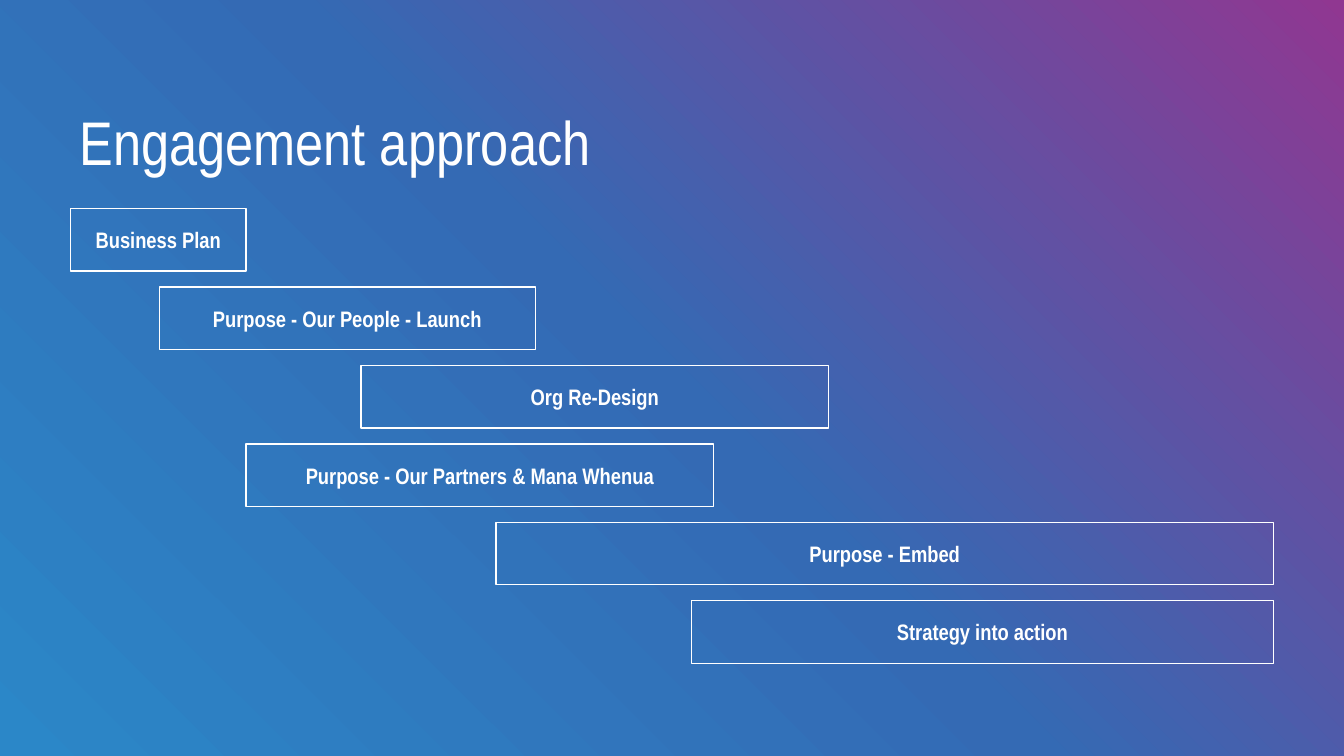
from copy import deepcopy

from pptx import Presentation
from pptx.dml.color import RGBColor
from pptx.enum.shapes import MSO_SHAPE
from pptx.enum.text import MSO_ANCHOR, PP_ALIGN
from pptx.util import Inches, Pt

RECT = MSO_SHAPE.RECTANGLE
MIDDLE = MSO_ANCHOR.MIDDLE
CENTER = PP_ALIGN.CENTER

# Content: phase name, start and end in inches across the slide
TITLE = "Engagement approach"
PHASES = [
    ("Business Plan", 0.70, 2.44),
    ("Purpose - Our People - Launch", 1.58, 5.31),
    ("Org Re-Design", 3.58, 8.22),
    ("Purpose - Our Partners & Mana Whenua", 2.44, 7.08),
    ("Purpose - Embed", 4.92, 12.63),
    ("Strategy into action", 6.86, 12.63),
]

# Style
FONT = "Arial Narrow"
WHITE = RGBColor(0xFF, 0xFF, 0xFF)
SKY = RGBColor(0x2B, 0x87, 0xC8)
BLUE = RGBColor(0x34, 0x6A, 0xB4)
PURPLE = RGBColor(0x90, 0x37, 0x91)
GRADIENT = [(0, SKY), (0.5, BLUE), (1, PURPLE)]

# Evenly spaced rows of the phase chart, in inches
FIRST_ROW, LAST_ROW, BAR_HEIGHT = 2.07, 5.96, 0.62
ROW_PITCH = (LAST_ROW - FIRST_ROW) / (len(PHASES) - 1)


def paint_background(s):
    fill = s.background.fill
    fill.gradient()
    fill.gradient_angle = 45
    # The default gradient has two stops; add the middle one
    stop_list = s._element.xpath(".//a:gsLst")[0]
    stop_list.insert(1, deepcopy(stop_list[0]))
    for stop, (position, color) in zip(fill.gradient_stops, GRADIENT):
        stop.position = position
        stop.color.rgb = color


def write(tf, text, size, bold=False):
    p = tf.paragraphs[0]
    p.text = text
    p.font.name = FONT
    p.font.size = Pt(size)
    p.font.bold = bold
    p.font.color.rgb = WHITE
    return p


def add_phase(s, row, name, start, end):
    top = FIRST_ROW + row * ROW_PITCH
    sp = s.shapes.add_shape(RECT, Inches(start), Inches(top),
                            Inches(end - start), Inches(BAR_HEIGHT))
    sp.shadow.inherit = False
    sp.fill.background()
    sp.line.color.rgb = WHITE
    sp.line.width = Pt(1)
    sp.text_frame.vertical_anchor = MIDDLE
    write(sp.text_frame, name, 16, bold=True).alignment = CENTER


def main():
    prs = Presentation()
    prs.slide_width, prs.slide_height = Inches(13.33), Inches(7.5)
    s = prs.slides.add_slide(prs.slide_layouts[6])
    paint_background(s)

    # Title
    box = s.shapes.add_textbox(Inches(0.69), Inches(0.98), Inches(7.06), Inches(0.84))
    box.text_frame.word_wrap = True
    write(box.text_frame, TITLE, 44)

    # Staggered phases
    for row, phase in enumerate(PHASES):
        add_phase(s, row, *phase)

    prs.save("out.pptx")


if __name__ == "__main__":
    main()
